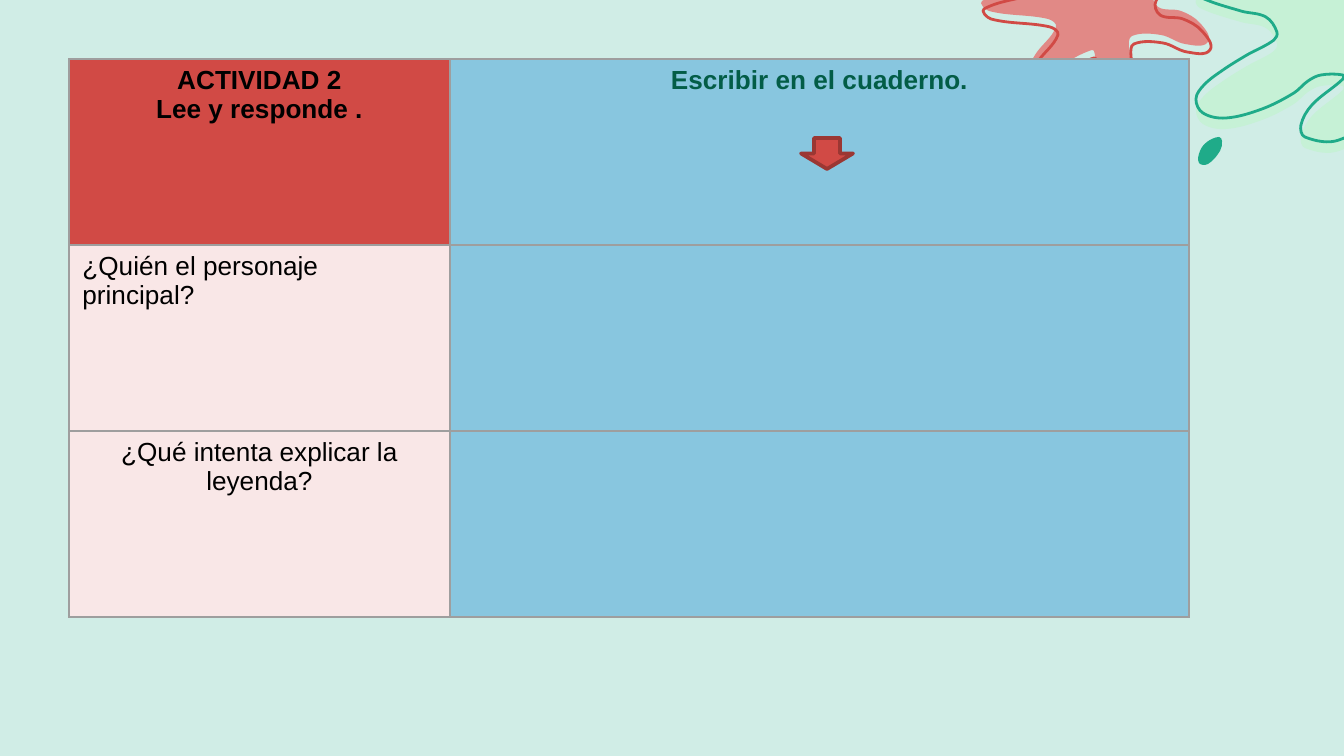
from lxml import etree
from math import hypot
from pptx import Presentation
from pptx import util as u
from pptx.dml.color import RGBColor
from pptx.enum import shapes, text
from pptx.oxml.ns import qn

EMU_PER_PX = 914400 / 134.4
FONT = "Arial"
RED, BLUE, PINK, GREEN = "D14A45", "88C6DF", "F9E7E7", "1FAB89"

# Points that each decorative outline passes through, in px
GREEN_BLOB = [
    (1196, -11), (1200, -3), (1241, 11), (1266, 17), (1277, 32), (1274, 40),
    (1247, 55), (1223, 70), (1204, 85), (1196, 99), (1203, 113), (1226, 118),
    (1262, 109), (1294, 93), (1308, 81), (1321, 75), (1343, 75), (1343, 79),
    (1312, 105), (1301, 125), (1305, 137), (1339, 140), (1390, 106),
    (1421, 38), (1380, -30), (1304, -46), (1211, -27),
]
RED_SPLASH = [
    (1136, -113), (1081, -35), (1042, -74), (1030, -70), (1050, -22),
    (1042, -9), (984, 9), (991, 19), (1050, 27), (1058, 35), (1037, 63),
    (1027, 87), (1036, 89), (1094, 58), (1098, 69), (1126, 122), (1138, 117),
    (1136, 80), (1131, 56), (1134, 44), (1163, 43), (1187, 52), (1210, 50),
    (1202, 31), (1183, 19), (1160, 15), (1156, 1), (1188, -36), (1195, -65),
    (1128, -24),
]
LEAF = [
    (1219, 137), (1207, 142), (1200, 151), (1199, 163), (1208, 164),
    (1220, 151), (1222, 141),
]

# Rows of the activity table: (lines, colour, bold, centred, fill) per cell
ANSWER = ([], "000000", False, False, BLUE)
ROWS = [
    [(["ACTIVIDAD 2", "Lee y responde ."], "000000", True, True, RED),
     (["Escribir en el cuaderno."], "035D47", True, True, BLUE)],
    [(["¿Quién el personaje principal?"], "000000", False, False, PINK), ANSWER],
    [(["¿Qué intenta explicar la leyenda?"], "000000", False, True, PINK), ANSWER],
]


def px(length):
    return u.Emu(round(length * EMU_PER_PX))


def rgb(value):
    return RGBColor.from_string(value)


def curve_handles(points):
    """Two control points for each segment of the closed smooth curve."""
    count = len(points)

    def direction(i):
        (x0, y0), (x1, y1) = points[i - 1], points[(i + 1) % count]
        size = hypot(x1 - x0, y1 - y0)
        return (x1 - x0) / size, (y1 - y0) / size

    for i, (x0, y0) in enumerate(points):
        after = (i + 1) % count
        x1, y1 = points[after]
        reach = hypot(x1 - x0, y1 - y0) / 3
        (ax, ay), (bx, by) = direction(i), direction(after)
        yield (x0 + reach * ax, y0 + reach * ay), (x1 - reach * bx, y1 - reach * by)


def round_segments(shape, points):
    """Turn the straight segments of a freeform into Bezier curves."""
    left, top = (min(axis) for axis in zip(*points))
    segments = list(shape._element.iter(qn("a:lnTo")))
    for segment, handles in zip(segments, curve_handles(points)):
        segment.tag = qn("a:cubicBezTo")
        for place, (x, y) in enumerate(handles):
            handle = etree.Element(
                qn("a:pt"), x=str(int(px(x - left))), y=str(int(px(y - top))))
            segment.insert(place, handle)


def style(shape, fill=None, line=None, width=1.5):
    shape.shadow.inherit = False
    if fill:
        shape.fill.solid()
        shape.fill.fore_color.rgb = rgb(fill)
    else:
        shape.fill.background()
    if line:
        shape.line.color.rgb = rgb(line)
        shape.line.width = u.Pt(width)
    else:
        shape.line.fill.background()


def add_blob(slide, points, shift=(0, 0), fill=None, line=None):
    dx, dy = shift
    corners = [(px(x + dx), px(y + dy)) for x, y in points]
    builder = slide.shapes.build_freeform(*corners[0])
    builder.add_line_segments(corners[1:] + corners[:1], close=True)
    blob = builder.convert_to_shape()
    round_segments(blob, points)
    style(blob, fill, line)


def add_borders(cell, color="9E9E9E", width=0.75):
    properties = cell._tc.get_or_add_tcPr()
    for side in ("lnL", "lnR", "lnT", "lnB"):
        border = etree.SubElement(properties, qn(f"a:{side}"), w=str(int(u.Pt(width))))
        solid = etree.SubElement(border, qn("a:solidFill"))
        etree.SubElement(solid, qn("a:srgbClr"), val=color)


def fill_cell(cell, lines, color, bold, centred, fill):
    add_borders(cell)
    cell.fill.solid()
    cell.fill.fore_color.rgb = rgb(fill)
    frame = cell.text_frame
    for i, line in enumerate(lines):
        paragraph = frame.add_paragraph() if i else frame.paragraphs[0]
        paragraph.alignment = text.PP_ALIGN.CENTER if centred else text.PP_ALIGN.LEFT
        run = paragraph.add_run()
        run.text = line
        run.font.name = FONT
        run.font.size = u.Pt(14)
        run.font.bold = bold
        run.font.color.rgb = rgb(color)


def add_activity_table(slide, left, top, widths, row_height):
    table = slide.shapes.add_table(
        len(ROWS), len(widths), px(left), px(top),
        px(sum(widths)), px(row_height * len(ROWS))).table
    for column, width in zip(table.columns, widths):
        column.width = px(width)
    for row, contents in zip(table.rows, ROWS):
        row.height = px(row_height)
        for cell, content in zip(row.cells, contents):
            fill_cell(cell, *content)


def add_down_arrow(slide, left, top, width, height):
    arrow = slide.shapes.add_shape(
        shapes.MSO_SHAPE.DOWN_ARROW, px(left), px(top), px(width), px(height))
    style(arrow, RED, "9B3733", 2)


def main():
    deck = Presentation()
    deck.slide_width, deck.slide_height = px(1344), px(756)
    slide = deck.slides.add_slide(deck.slide_layouts[6])
    slide.background.fill.solid()
    slide.background.fill.fore_color.rgb = rgb("D0EDE6")

    # Corner decoration: filled blobs, then their shifted outlines
    add_blob(slide, GREEN_BLOB, shift=(0, 11), fill="C6F1D6")
    add_blob(slide, RED_SPLASH, shift=(-2, -8), fill="E18986")
    add_blob(slide, GREEN_BLOB, line=GREEN)
    add_blob(slide, RED_SPLASH, line=RED)
    add_blob(slide, LEAF, fill=GREEN)

    # Activity table and the arrow under its second heading
    add_activity_table(slide, 69, 59, [381, 739], 186)
    add_down_arrow(slide, 801, 138, 52, 31)

    deck.save("out.pptx")


if __name__ == "__main__":
    main()
